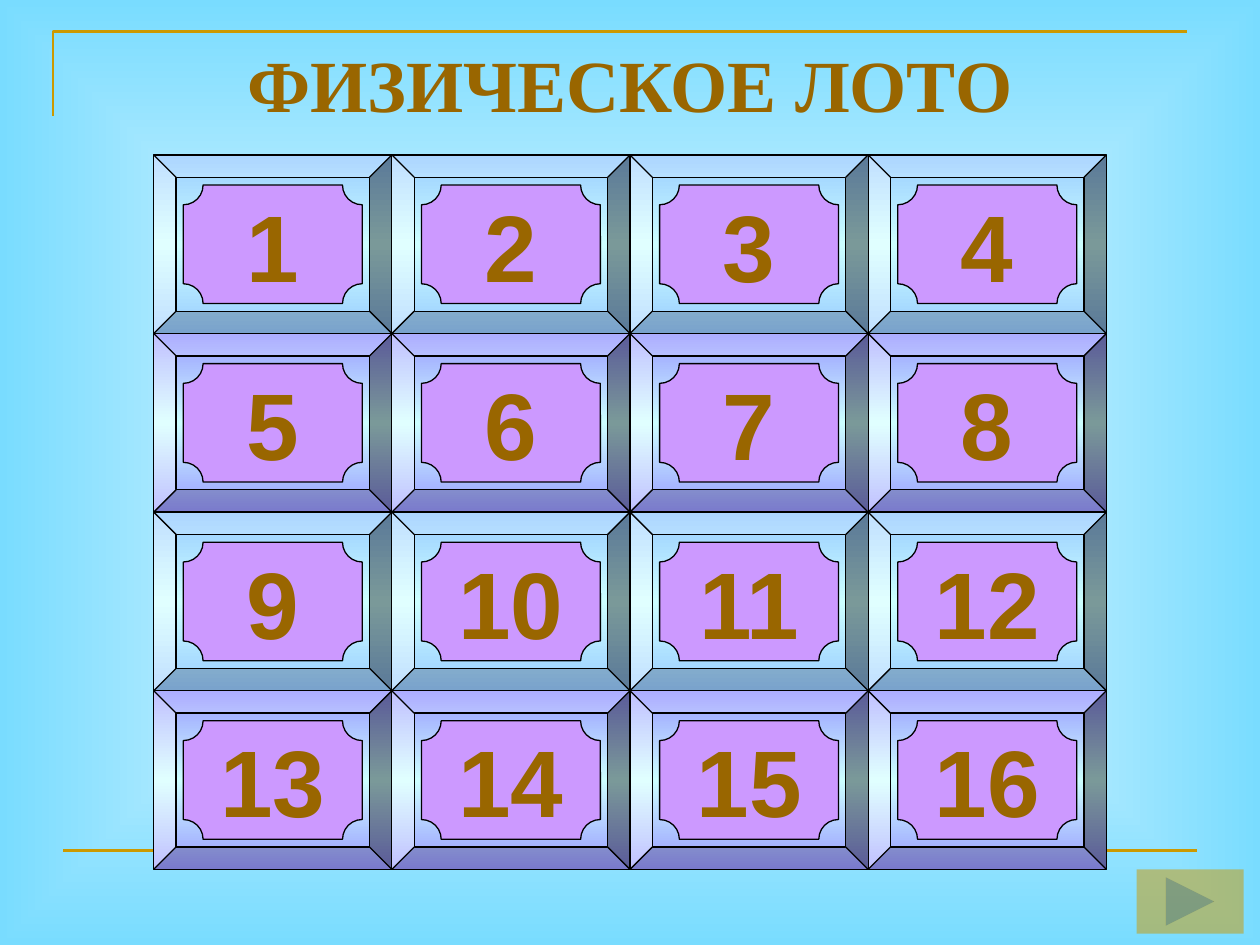
from dataclasses import dataclass

from lxml.etree import SubElement
from pptx import Presentation
from pptx.dml.color import RGBColor
from pptx.enum.shapes import MSO_CONNECTOR as Connector, MSO_SHAPE as Shape
from pptx.enum.text import MSO_ANCHOR as Anchor, PP_ALIGN as Align
from pptx.oxml.ns import qn
from pptx.util import Inches, Pt

COLORS = {
    "white": "FFFFFF", "sky": "79DCFF", "gold": "CC9900", "brown": "996600",
    "black": "000000", "blue": "99CCFF", "violet": "9999FF",
    "pale": "CCFFFF", "plaque": "CC99FF",
}
COLUMNS, ROWS = 4, 4
GRID_LEFT, GRID_TOP = 1.22, 1.23
CELL_WIDTH, CELL_HEIGHT = 7.56 / COLUMNS, 5.67 / ROWS
PLAQUE_WIDTH, PLAQUE_HEIGHT = 1.42, 0.94
TITLE_FORMAT = {"name": "Times New Roman", "size": Pt(42), "bold": True}
NUMBER_FORMAT = {"name": "Arial", "size": Pt(54), "bold": True}


@dataclass
class Tile:
    number: int

    @property
    def row(self) -> int:
        return (self.number - 1) // COLUMNS

    @property
    def left(self) -> float:
        return GRID_LEFT + (self.number - 1) % COLUMNS * CELL_WIDTH

    @property
    def top(self) -> float:
        return GRID_TOP + self.row * CELL_HEIGHT

    @property
    def edge_color(self) -> str:
        return ("blue", "violet")[self.row % 2]


def rgb(name: str) -> RGBColor:
    return RGBColor.from_string(COLORS[name])


def add_alpha(color_element, percent: int) -> None:
    SubElement(color_element, qn("a:alpha"), val=str(percent * 1000))


def set_stops(gradient, stops: list) -> None:
    """Replace the stops with (position, colour name, opacity) entries."""
    stop_list = gradient.find(qn("a:gsLst"))
    for old_stop in list(stop_list):
        stop_list.remove(old_stop)
    for position, name, opacity in stops:
        stop = SubElement(stop_list, qn("a:gs"), pos=str(position * 1000))
        color = SubElement(stop, qn("a:srgbClr"), val=COLORS[name])
        if opacity < 100:
            add_alpha(color, opacity)


def style_line(shape, color: str, width: float) -> None:
    shape.line.color.rgb = rgb(color)
    shape.line.width = Pt(width)


def add_preset(page, kind, left: float, top: float, width: float, height: float):
    shape = page.shapes.add_shape(
        kind, Inches(left), Inches(top), Inches(width), Inches(height))
    shape.shadow.inherit = False
    return shape


def write_text(box, text: str, formats: dict) -> None:
    para = box.text_frame.paragraphs[0]
    para.alignment = Align.CENTER
    span = para.add_run()
    span.text = text
    for key, value in formats.items():
        setattr(span.font, key, value)
    span.font.color.rgb = rgb("brown")


def paint_background(page) -> None:
    page.background.fill.gradient()
    gradient = next(page.element.iter(qn("a:gradFill")))
    set_stops(gradient, [(0, "white", 100), (100, "sky", 74)])
    gradient.remove(gradient.find(qn("a:lin")))
    center = SubElement(gradient, qn("a:path"), path="shape")
    SubElement(center, qn("a:fillToRect"),
               {side: "50000" for side in ("l", "t", "r", "b")})


def draw_rules(page) -> None:
    builder = page.shapes.build_freeform(Inches(0.42), Inches(0.92))
    builder.add_line_segments(
        [(Inches(0.42), Inches(0.25)), (Inches(9.42), Inches(0.25))], close=False)
    corner = builder.convert_to_shape()
    corner.shadow.inherit = False
    corner.fill.background()
    bottom_rule = page.shapes.add_connector(
        Connector.STRAIGHT, Inches(0.5), Inches(6.75), Inches(9.5), Inches(6.75))
    SubElement(bottom_rule.element.spPr, qn("a:effectLst"))
    for rule in (corner, bottom_rule):
        style_line(rule, "gold", 1.5)


def draw_title(page) -> None:
    box = page.shapes.add_textbox(Inches(0.5), Inches(0.21), Inches(9), Inches(0.61))
    frame = box.text_frame
    frame.word_wrap = True
    frame.margin_top, frame.margin_bottom = Inches(0.1), 0
    write_text(box, "ФИЗИЧЕСКОЕ ЛОТО", TITLE_FORMAT)


def draw_bevel(page, tile: Tile) -> None:
    bevel = add_preset(page, Shape.BEVEL, tile.left, tile.top, CELL_WIDTH, CELL_HEIGHT)
    bevel.adjustments[0] = 0.125
    bevel.fill.gradient()
    bevel.fill.gradient_angle = 90
    set_stops(bevel.element.spPr.find(qn("a:gradFill")),
              [(0, tile.edge_color, 100), (50, "pale", 100),
               (100, tile.edge_color, 100)])
    style_line(bevel, "black", 0.75)


def draw_plaque(page, tile: Tile) -> None:
    plaque = add_preset(
        page, Shape.PLAQUE,
        tile.left + (CELL_WIDTH - PLAQUE_WIDTH) / 2,
        tile.top + (CELL_HEIGHT - PLAQUE_HEIGHT) / 2,
        PLAQUE_WIDTH, PLAQUE_HEIGHT)
    plaque.fill.solid()
    plaque.fill.fore_color.rgb = rgb("plaque")
    style_line(plaque, "black", 0.75)
    plaque.text_frame.word_wrap = False
    plaque.text_frame.vertical_anchor = Anchor.MIDDLE
    write_text(plaque, str(tile.number), NUMBER_FORMAT)


def draw_next_button(page) -> None:
    button = add_preset(
        page, Shape.ACTION_BUTTON_FORWARD_OR_NEXT, 9.02, 6.9, 0.85, 0.51)
    button.fill.solid()
    button.fill.fore_color.rgb = rgb("gold")
    add_alpha(next(button.element.spPr.iter(qn("a:srgbClr"))), 50)
    button.line.fill.background()


def main() -> None:
    deck = Presentation()
    deck.slide_width, deck.slide_height = Inches(10), Inches(7.5)
    page = deck.slides.add_slide(deck.slide_layouts[6])

    # Backdrop and heading
    paint_background(page)
    draw_rules(page)
    draw_title(page)

    # Numbered tiles
    tiles = [Tile(number) for number in range(1, COLUMNS * ROWS + 1)]
    for draw in (draw_bevel, draw_plaque):
        for tile in tiles:
            draw(page, tile)

    # Navigation
    draw_next_button(page)
    deck.save("out.pptx")


if __name__ == "__main__":
    main()
